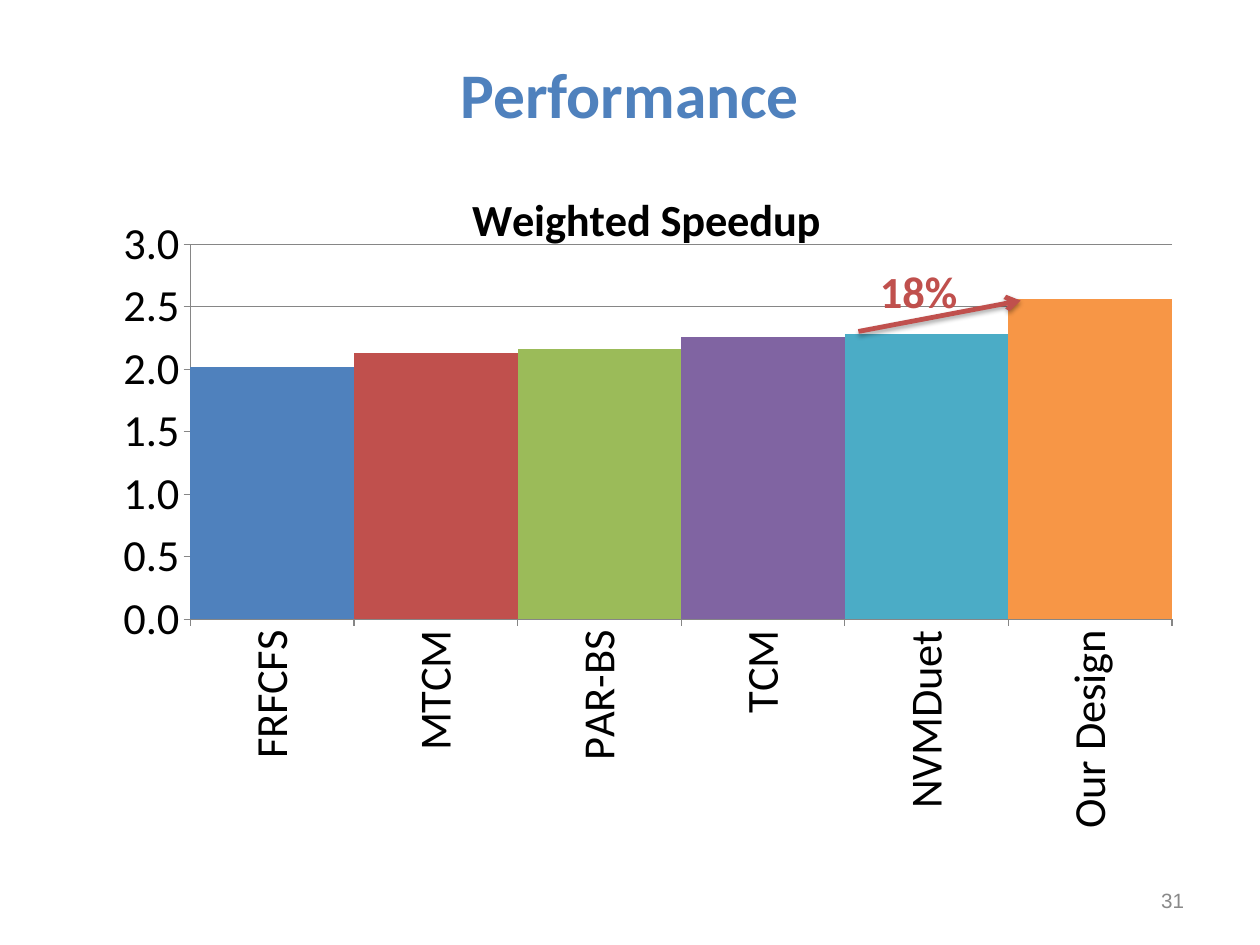
from dataclasses import dataclass

from lxml.etree import SubElement
from pptx import Presentation
from pptx.chart.chart import Chart
from pptx.chart.data import CategoryChartData
from pptx.dml.color import RGBColor
from pptx.enum.chart import XL_CHART_TYPE, XL_TICK_MARK
from pptx.enum.shapes import MSO_CONNECTOR
from pptx.enum.text import MSO_ANCHOR, MSO_AUTO_SIZE, PP_ALIGN
from pptx.oxml import parse_xml
from pptx.oxml.ns import nsdecls, qn
from pptx.slide import Slide
from pptx.text.text import Font, TextFrame
from pptx.util import Cm, Inches, Pt

COLORS = {
    "blue": "4F81BD",
    "red": "C0504D",
    "green": "9BBB59",
    "purple": "8064A2",
    "teal": "4BACC6",
    "orange": "F79646",
    "black": "000000",
    "axis": "868686",
    "number": "898989",
}


@dataclass(frozen=True)
class Bar:
    name: str
    speedup: float
    color: str


@dataclass(frozen=True)
class Style:
    size: float
    color: str
    font: str = "Calibri"
    bold: bool = False


@dataclass(frozen=True)
class Label:
    text: str
    left: float
    top: float
    width: float
    height: float
    style: Style
    align: PP_ALIGN
    anchor: MSO_ANCHOR
    spacing: float = 1.0
    margin_x: float = 0.11
    margin_y: float = 0.06


BARS = [
    Bar("FRFCFS", 2.02, "blue"),
    Bar("MTCM", 2.13, "red"),
    Bar("PAR-BS", 2.16, "green"),
    Bar("TCM", 2.26, "purple"),
    Bar("NVMDuet", 2.28, "teal"),
    Bar("Our Design", 2.56, "orange"),
]
CHART_TITLE = "Weighted Speedup"
AXIS_STYLE = Style(28, "black")
TITLE = Label("Performance", 0.55, 0.33, 9.92, 0.97, Style(40, "blue", bold=True),
              PP_ALIGN.CENTER, MSO_ANCHOR.MIDDLE)
LABELS = [
    Label("31", 7.9, 7.66, 2.57, 0.44, Style(13, "number", "Arial"),
          PP_ALIGN.RIGHT, MSO_ANCHOR.MIDDLE),
    Label("18%", 7.6, 2.3, 1, 0.54, Style(28, "red", bold=True),
          PP_ALIGN.LEFT, MSO_ANCHOR.TOP, 0.93, 0.1, 0.05),
]


def rgb(name: str) -> RGBColor:
    return RGBColor.from_string(COLORS[name])


def style_font(font: Font, style: Style) -> None:
    font.name = style.font
    font.size = Pt(style.size)
    font.bold = style.bold
    font.color.rgb = rgb(style.color)


def write(frame: TextFrame, label: Label) -> None:
    frame.word_wrap = True
    frame.auto_size = MSO_AUTO_SIZE.NONE
    frame.vertical_anchor = label.anchor
    frame.margin_left = frame.margin_right = Inches(label.margin_x)
    frame.margin_top = frame.margin_bottom = Inches(label.margin_y)
    para = frame.paragraphs[0]
    para.alignment = label.align
    para.line_spacing = label.spacing
    span = para.add_run()
    span.text = label.text
    style_font(span.font, label.style)


def add_title(page: Slide) -> None:
    title = page.shapes.title
    title.left, title.top = Inches(TITLE.left), Inches(TITLE.top)
    title.width, title.height = Inches(TITLE.width), Inches(TITLE.height)
    write(title.text_frame, TITLE)


def add_label(page: Slide, label: Label) -> None:
    box = page.shapes.add_textbox(Inches(label.left), Inches(label.top),
                                  Inches(label.width), Inches(label.height))
    write(box.text_frame, label)


def manual_layout(settings: dict[str, str | float]):
    entries = "".join(f'<c:{key} val="{value}"/>' for key, value in settings.items())
    return parse_xml(f'<c:layout {nsdecls("c")}><c:manualLayout>{entries}'
                     "</c:manualLayout></c:layout>")


def format_axes(chart: Chart) -> None:
    for axis in (chart.category_axis, chart.value_axis):
        axis.major_tick_mark = XL_TICK_MARK.OUTSIDE
        axis.minor_tick_mark = XL_TICK_MARK.NONE
        axis.format.line.color.rgb = rgb("axis")
        axis.format.line.width = Pt(0.75)
        style_font(axis.tick_labels.font, AXIS_STYLE)
    names = chart.category_axis._element.find(qn("c:txPr"))
    names.find(qn("a:bodyPr")).set("rot", "-5400000")
    values = chart.value_axis
    values.minimum_scale, values.maximum_scale = 0, 3
    values.major_unit = 0.5
    values.tick_labels.number_format = "#,##0.0"
    values.tick_labels.number_format_is_linked = False
    values.has_major_gridlines = True
    values.major_gridlines.format.line.color.rgb = rgb("axis")
    values.major_gridlines.format.line.width = Pt(0.75)


def add_speedup_chart(page: Slide) -> None:
    data = CategoryChartData(number_format="0.00")
    data.categories = [bar.name for bar in BARS]
    data.add_series(CHART_TITLE, [bar.speedup for bar in BARS])
    chart = page.shapes.add_chart(XL_CHART_TYPE.COLUMN_CLUSTERED, Inches(1.01),
                                  Inches(1.47), Inches(9.25), Inches(6), data).chart
    style_font(chart.font, Style(18, "black"))
    chart.has_legend = False
    chart.has_title = True
    span = chart.chart_title.text_frame.paragraphs[0].add_run()
    span.text = CHART_TITLE
    style_font(span.font, Style(28, "black", bold=True))
    chart.chart_title.include_in_layout = True
    title = chart.chart_title._element
    for old in title.findall(qn("c:layout")):
        title.remove(old)
    title.find(qn("c:tx")).addnext(manual_layout(
        {"xMode": "edge", "yMode": "edge", "x": 0.33, "y": 0.02}))
    area = chart._chartSpace.chart.plotArea
    for old in area.findall(qn("c:layout")):
        area.remove(old)
    area.insert(0, manual_layout(
        {"layoutTarget": "inner", "xMode": "edge", "yMode": "edge",
         "x": 0.071, "y": 0.111, "w": 0.929, "h": 0.547}))
    plot = chart.plots[0]
    plot.gap_width = 0
    plot.vary_by_categories = False
    series = plot.series[0]
    series.format.fill.solid()
    series.format.fill.fore_color.rgb = rgb("blue")
    for index, bar in enumerate(BARS):
        fill = series.points[index].format.fill
        fill.solid()
        fill.fore_color.rgb = rgb(bar.color)
    format_axes(chart)


def add_gain_arrow(page: Slide) -> None:
    arrow = page.shapes.add_connector(MSO_CONNECTOR.STRAIGHT, Inches(7.51),
                                      Inches(2.9), Inches(8.93), Inches(2.63))
    arrow.line.color.rgb = rgb("red")
    arrow.line.width = Pt(3)
    SubElement(arrow.line._get_or_add_ln(), qn("a:tailEnd"), type="arrow")
    effects = SubElement(arrow._element.spPr, qn("a:effectLst"))
    shadow = SubElement(effects, qn("a:outerShdw"), blurRad=str(Pt(3.1)),
                        dist=str(Pt(1.8)), dir="5400000", rotWithShape="0")
    color = SubElement(shadow, qn("a:srgbClr"), val=COLORS["black"])
    SubElement(color, qn("a:alpha"), val="35000")


def main() -> None:
    deck = Presentation()
    deck.slide_width, deck.slide_height = Cm(28), Cm(21)
    page = deck.slides.add_slide(deck.slide_layouts[5])
    add_title(page)
    add_speedup_chart(page)
    add_gain_arrow(page)
    for label in LABELS:
        add_label(page, label)
    deck.save("out.pptx")


if __name__ == "__main__":
    main()
